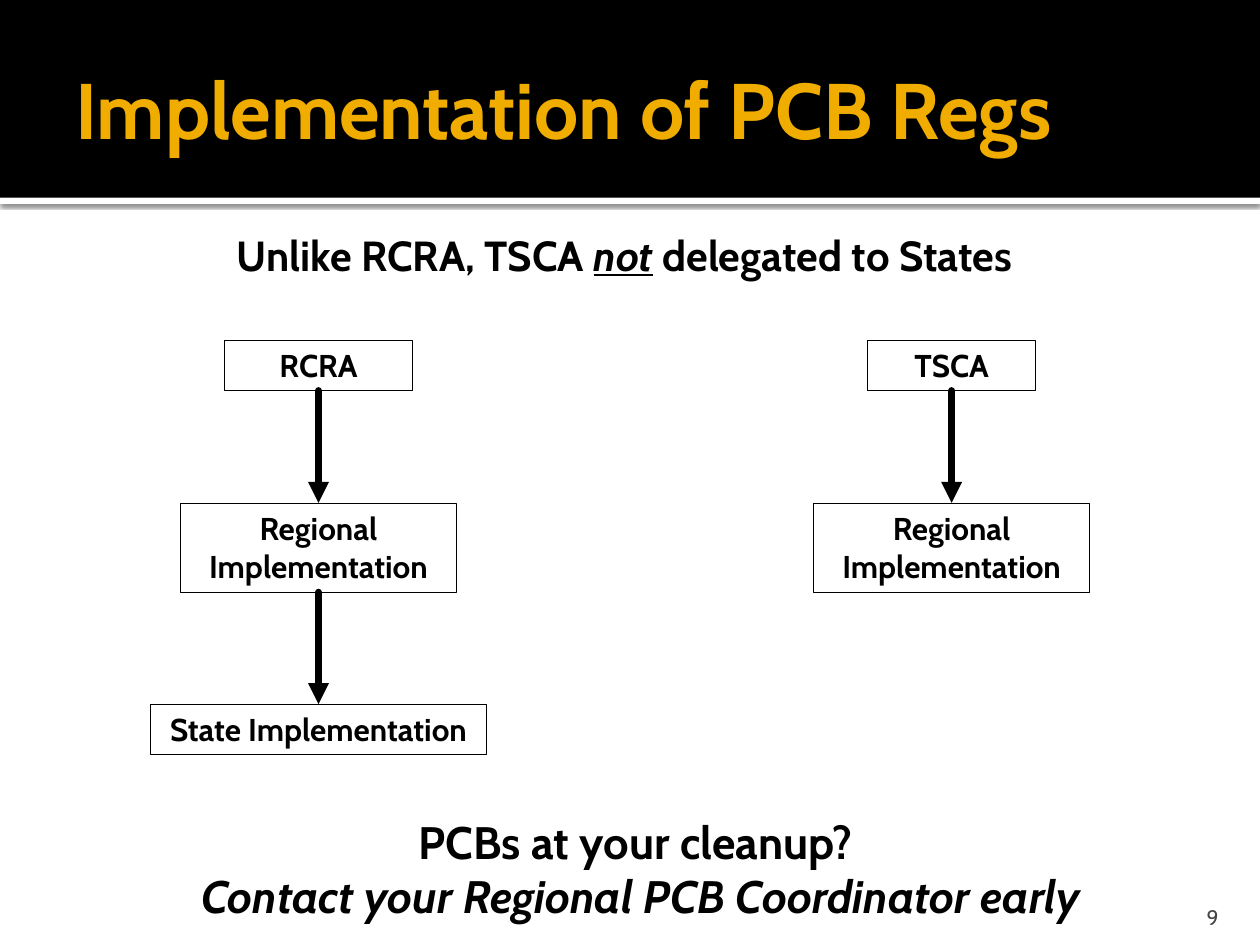
"""Build the slide on how the PCB regulations are implemented."""
import pptx
import pptx.dml.color
import pptx.enum.shapes
import pptx.enum.text
import pptx.oxml
import pptx.oxml.ns
import pptx.util

Pt = pptx.util.Pt
RGBColor = pptx.dml.color.RGBColor
Align = pptx.enum.text.PP_ALIGN
Anchor = pptx.enum.text.MSO_ANCHOR
RECTANGLE = pptx.enum.shapes.MSO_SHAPE.RECTANGLE
qn = pptx.oxml.ns.qn

BLACK = RGBColor(0x00, 0x00, 0x00)
WHITE = RGBColor(0xFF, 0xFF, 0xFF)
GOLD = RGBColor(0xF0, 0xAD, 0x00)
GREY = RGBColor(0x45, 0x45, 0x45)
NAMESPACE = pptx.oxml.ns.nsdecls("a")


def write_text(shape, lines, size, color=BLACK, bold=True, align=Align.CENTER,
               anchor=Anchor.TOP, indent=0, right=7.2, bottom=3.6):
    """Write lines, each a list of (text, italic, underline) runs."""
    frame = shape.text_frame
    frame.word_wrap = True
    frame.vertical_anchor = anchor
    frame.margin_left, frame.margin_top = Pt(7.2), Pt(3.6)
    frame.margin_right, frame.margin_bottom = Pt(right), Pt(bottom)
    for index, line in enumerate(lines):
        paragraph = frame.add_paragraph() if index else frame.paragraphs[0]
        paragraph.alignment = align
        properties = paragraph._p.get_or_add_pPr()
        properties.set("marL", str(Pt(indent)))
        properties.set("indent", "0")
        for text, italic, underline in line:
            run = paragraph.add_run()
            run.text = text
            run.font.name = "Cabin"
            run.font.size = Pt(size)
            run.font.bold = bold
            run.font.italic = italic
            run.font.underline = underline
            run.font.color.rgb = color


presentation = pptx.Presentation()
presentation.slide_width, presentation.slide_height = Pt(720), Pt(540)
slide = presentation.slides.add_slide(presentation.slide_layouts[6])
shapes = slide.shapes

for top, height, color in [(113, 3.6, WHITE), (0, 113, BLACK)]:
    band = shapes.add_shape(RECTANGLE, 0, Pt(top), Pt(720), Pt(height))
    band.shadow.inherit = False
    band.fill.solid()
    band.fill.fore_color.rgb = color
    band.line.fill.background()
    if color == WHITE:
        band._element.spPr.find(qn("a:effectLst")).append(pptx.oxml.parse_xml(
            f'<a:outerShdw {NAMESPACE} blurRad="{Pt(2.5)}" dist="{Pt(0.8)}" '
            'dir="5400000" algn="tl" rotWithShape="0"><a:srgbClr val="000000">'
            '<a:alpha val="60000"/></a:srgbClr></a:outerShdw>'))

title = shapes.add_textbox(Pt(36), Pt(12.2), Pt(648), Pt(98.6))
write_text(title, [[("Implementation of PCB Regs", False, False)]], 45, GOLD,
           align=Align.LEFT, anchor=Anchor.MIDDLE, right=3.6)

subtitle = shapes.add_textbox(Pt(114.5), Pt(127.4), Pt(475.2), Pt(36))
write_text(subtitle, [[("Unlike RCRA, TSCA ", False, False), ("not", True, True),
                       (" delegated to States", False, False)]], 24, indent=9.4)
subtitle.text_frame.word_wrap = False

ROWS = [(194.4, 28.8), (287.4, 51), (402.4, 28.8)]
CHAINS = [
    (182, [("RCRA", 107.4), ("Regional Implementation", 158),
           ("State Implementation", 192.4)]),
    (543.8, [("TSCA", 96), ("Regional Implementation", 158)]),
]
for center, steps in CHAINS:
    previous_bottom = None
    for (label, width), (top, height) in zip(steps, ROWS):
        box = shapes.add_shape(RECTANGLE, Pt(center - width / 2), Pt(top),
                               Pt(width), Pt(height))
        box.shadow.inherit = False
        box.fill.background()
        box.line.color.rgb = BLACK
        box.line.width = Pt(0.5)
        write_text(box, [[(label, False, False)]], 18)
        if previous_bottom is not None:
            arrow = shapes.add_connector(
                pptx.enum.shapes.MSO_CONNECTOR.STRAIGHT,
                Pt(center), Pt(previous_bottom), Pt(center), Pt(top))
            arrow.line.color.rgb = BLACK
            arrow.line.width = Pt(4)
            line = arrow.line._get_or_add_ln()
            line.set("cap", "rnd")
            line.append(pptx.oxml.parse_xml(
                f'<a:tailEnd {NAMESPACE} type="triangle"/>'))
            arrow._element.spPr.append(
                pptx.oxml.parse_xml(f"<a:effectLst {NAMESPACE}/>"))
        previous_bottom = top + height

closing = shapes.add_textbox(Pt(65.5), Pt(441.4), Pt(589), Pt(109.4))
write_text(closing, [[("PCBs at your cleanup? ", False, False)],
                     [("Contact your Regional PCB Coordinator early", True, False)]],
           26, anchor=Anchor.MIDDLE, indent=9.4, right=3.6)

number = shapes.add_textbox(Pt(645.8), Pt(509.8), Pt(57.6), Pt(21.6))
write_text(number, [[("9", False, False)]], 12, GREY, bold=False,
           align=Align.RIGHT, anchor=Anchor.BOTTOM, bottom=0)

presentation.save("out.pptx")
